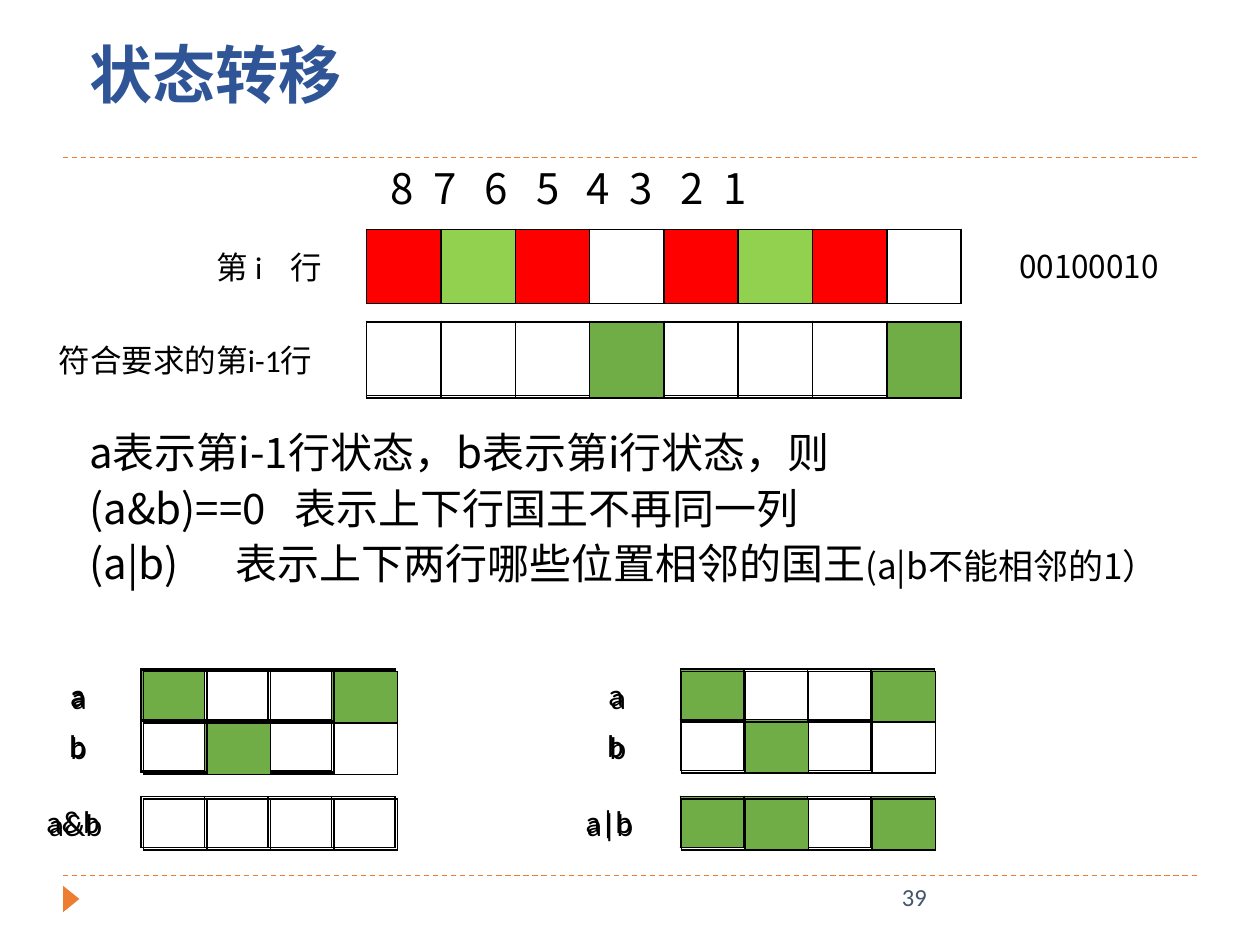
"""Build the slide on state transitions between board rows."""
from dataclasses import dataclass

from lxml import etree
from pptx import Presentation
from pptx import util as u
from pptx.dml.color import RGBColor
from pptx.enum import dml, shapes, text
from pptx.oxml.ns import qn

COLS, ROWS = 100, 75
FILLS = {"R": "FF0000", "L": "92D050", "G": "70AD47", "W": "FFFFFF"}
CJK = "Noto Sans CJK SC"

prs = Presentation()
prs.slide_width, prs.slide_height = u.Inches(10), u.Inches(7.5)
s = prs.slides.add_slide(prs.slide_layouts[5])


@dataclass
class Label:
    words: str
    x: float
    y: float
    w: float
    h: float = 4
    size: int = 18
    font: str = "Calibri"
    color: str = "000000"
    tabs: tuple = ()


@dataclass
class Strip:
    cells: str
    x: float
    y: float
    cell_w: float = 5.04
    cell_h: float = 4
    frame_h: float = 4


def rgb(value: str) -> RGBColor:
    return RGBColor.from_string(value)


def col(n: float) -> int:
    return round(prs.slide_width * n / COLS)


def row(n: float) -> int:
    return round(prs.slide_height * n / ROWS)


def set_tabs(p, stops: tuple) -> None:
    if stops:
        tabs = etree.SubElement(p._p.get_or_add_pPr(), qn("a:tabLst"))
        for stop in stops:
            etree.SubElement(tabs, qn("a:tab"), pos=str(col(stop)), algn="l")


def style(p, size: int, font: str, color: str, bold: bool = False) -> None:
    p.font.size, p.font.name, p.font.bold = u.Pt(size), font, bold
    p.font.color.rgb = rgb(color)


def add_box(x: float, y: float, w: float, h: float):
    tf = s.shapes.add_textbox(col(x), row(y), col(w), row(h)).text_frame
    tf.word_wrap = True
    return tf


def add_label(label: Label) -> None:
    p = add_box(label.x, label.y, label.w, label.h).paragraphs[0]
    p.text = label.words
    set_tabs(p, label.tabs)
    style(p, label.size, label.font, label.color)


def add_border(cell) -> None:
    pr = cell._tc.get_or_add_tcPr()
    for i, side in enumerate(("lnL", "lnR", "lnT", "lnB")):
        ln = etree.Element(qn(f"a:{side}"), w=str(u.Pt(1)))
        fill = etree.SubElement(ln, qn("a:solidFill"))
        etree.SubElement(fill, qn("a:srgbClr"), val="000000")
        pr.insert(i, ln)


def add_strip(strip: Strip) -> None:
    n = len(strip.cells)
    frame = s.shapes.add_table(1, n, col(strip.x), row(strip.y),
                               col(strip.cell_w * n), row(strip.cell_h))
    frame.height = row(strip.frame_h)
    table = frame.table
    table.first_row = table.horz_banding = False
    for cell, key in zip(table.iter_cells(), strip.cells):
        if key in FILLS:
            cell.fill.solid()
            cell.fill.fore_color.rgb = rgb(FILLS[key])
        else:
            cell.fill.background()
        add_border(cell)


def add_rule(y: float) -> None:
    line = s.shapes.add_connector(shapes.MSO_CONNECTOR.STRAIGHT,
                                  col(5), row(y), col(95), row(y))
    line.line.color.rgb = rgb("ED7D31")
    line.line.width = u.Pt(0.75)
    line.line.dash_style = dml.MSO_LINE.DASH
    etree.SubElement(line._element.spPr, qn("a:effectLst"))


def add_title(words: str) -> None:
    sp = s.shapes.title
    sp.left, sp.top, sp.width, sp.height = col(6.1), row(2.3), col(24), row(7.1)
    tf = sp.text_frame
    tf.text = words
    tf.word_wrap = True
    tf.auto_size = text.MSO_AUTO_SIZE.NONE
    tf.vertical_anchor = text.MSO_ANCHOR.TOP
    p = tf.paragraphs[0]
    p.alignment = text.PP_ALIGN.LEFT
    style(p, 36, "Calibri", "2F5597", True)


def add_marker() -> None:
    sp = s.shapes.add_shape(shapes.MSO_SHAPE.ISOSCELES_TRIANGLE,
                            col(4.6), row(70.7), col(2.1), row(1.3))
    sp.rotation = 90
    sp.shadow.inherit = False
    sp.fill.solid()
    sp.fill.fore_color.rgb = rgb("ED7D31")
    sp.line.fill.background()


def add_rules_text() -> None:
    tf = add_box(6.1, 33, 91, 14.3)
    lines = (((("a表示第i-1行状态，b表示第i行状态，则", 24),), ()),
             ((("(a&b)==0\t表示上下行国王不再同一列", 24),), (16.3,)),
             ((("(a|b)\t表示上下两行哪些位置相邻的国王", 24),
               ("(a|b不能相邻的1）", 20)), (11.6,)))
    for i, (runs, tabs) in enumerate(lines):
        p = tf.add_paragraph() if i else tf.paragraphs[0]
        p.line_spacing = 1.1
        set_tabs(p, tabs)
        style(p, 24, CJK, "000000")
        for words, size in runs:
            r = p.add_run()
            r.text = words
            if size != 24:
                r.font.size = u.Pt(size)


LABELS = (
    Label("39", 70.6, 69.5, 22.5, size=14, color="44546A"),
    Label("8\t7\t6\t5\t4\t3\t2\t1", 30, 12.4, 48.8, 5, 24, CJK,
          tabs=(3.4, 7.5, 11.6, 15.6, 19, 23, 26.4)),
    Label("符合要求的第i-1行", 3.7, 26.6, 24.4),
    Label("第 i\t行", 16.2, 19.2, 10.5, tabs=(5.9,)),
    Label("00100010", 79.9, 19.1, 17.9, font=CJK),
)
BOARD = (
    Strip("RLRWRLRW", 29.1, 18.2, 5.9, 5.9, 11.8),
    Strip("...G....", 29.1, 25.5, 5.9, 5.9, 11.8),
    Strip(".......G", 29.1, 25.5, 5.9, 5.9, 11.8),
    Strip("...G...G", 29.1, 25.6, 5.9, 6, 6),
)
AND_X, OR_X = 11.2, 54
EXAMPLES = (
    Strip("G..G", AND_X, 53.1), Strip(".G.W", AND_X, 57.1),
    Strip("G..G", OR_X, 53.1), Strip("GG.G", OR_X, 63.2),
    Strip("...G", AND_X, 53.2), Strip(".G.W", AND_X, 57.2),
    Strip("....", AND_X, 63.2),
    Strip(".G.W", OR_X, 57.1), Strip(".G.G", OR_X, 63.2),
    Strip(".G.W", AND_X + 0.2, 57.3),
    Strip("...G", OR_X + 0.1, 53.3), Strip(".G.G", OR_X + 0.1, 63.4),
    Strip("...G", AND_X + 0.2, 53.3), Strip(".G.W", AND_X + 0.2, 57.4),
    Strip("....", AND_X + 0.2, 63.4),
    Strip(".G.W", OR_X + 0.1, 57.3),
)
NAMES = (
    ("a", 5.3, ((4.6, 53.1), (4.6, 53.2), (4.7, 53.3), (47.3, 53.1), (47.5, 53.3))),
    ("b", 5.3, ((4.5, 57.1), (4.6, 57.3), (47.2, 57.1), (47.4, 57.3))),
    ("a&b", 7.2, ((2.7, 63.2), (2.9, 63.4))),
    ("a|b", 7.2, ((45.5, 63.2), (45.6, 63.4))),
)


def main() -> None:
    for y in (69.5, 12.5):
        add_rule(y)
    add_marker()
    add_title("状态转移")
    for strip in BOARD + EXAMPLES:
        add_strip(strip)
    for label in LABELS:
        add_label(label)
    add_rules_text()
    for words, width, places in NAMES:
        for x, y in places:
            add_label(Label(words, x, y, width))
    prs.save("out.pptx")


if __name__ == "__main__":
    main()
